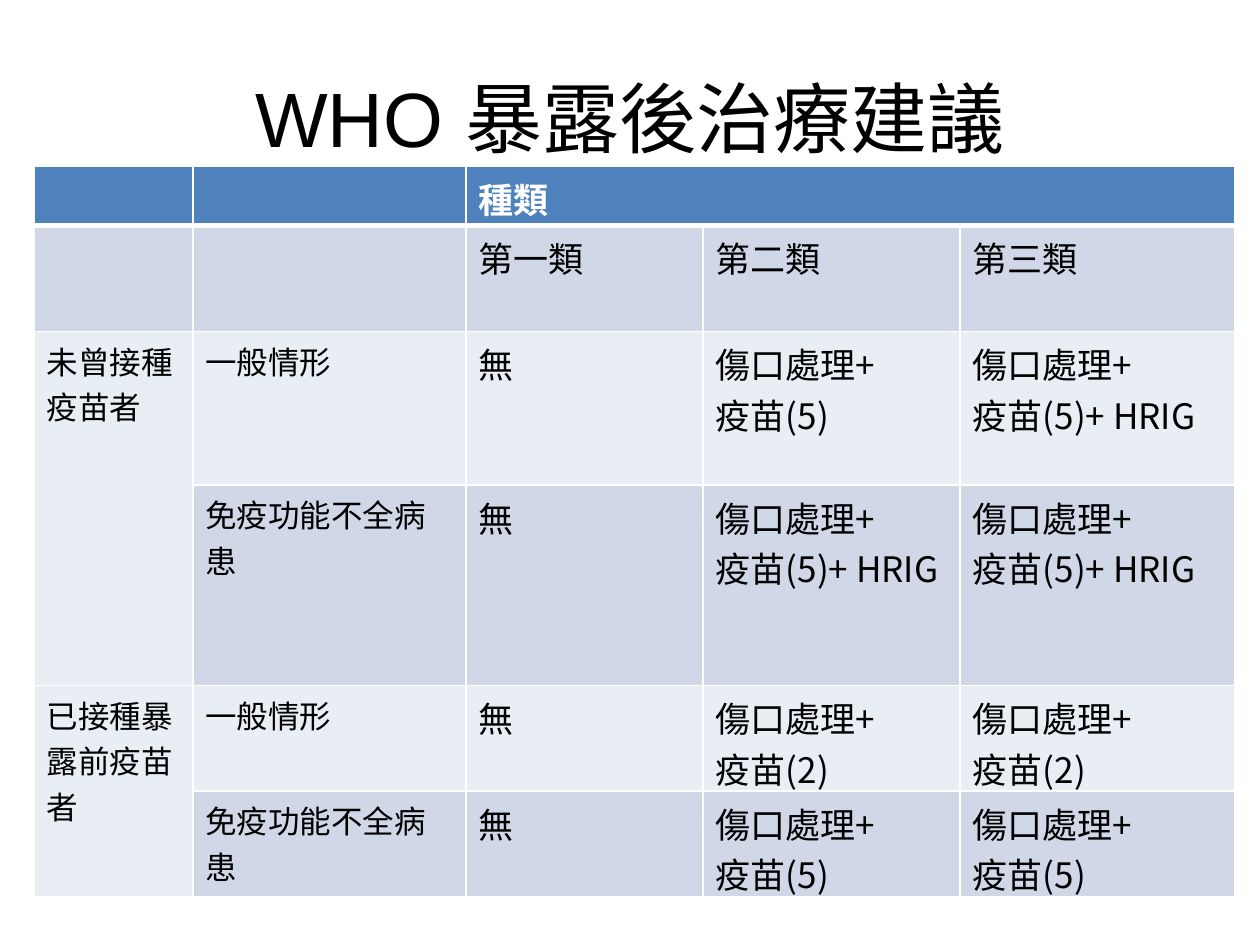
from lxml import etree
from pptx import Presentation
from pptx.dml.color import RGBColor
from pptx.enum.text import MSO_ANCHOR as Anchor, PP_ALIGN as Align
from pptx.oxml.ns import qn
from pptx.util import Inches, Pt

CJK = "Noto Sans CJK SC"


def color(value):
    return RGBColor.from_string(value)


def write(frame, text, size=20, font=CJK, ink="000000", bold=False, align=Align.LEFT):
    frame.word_wrap = True
    for i, line in enumerate(text.split("\n")):
        para = frame.paragraphs[0] if i == 0 else frame.add_paragraph()
        para.alignment = align
        run = para.add_run()
        run.text = line
        run.font.size, run.font.bold, run.font.name = Pt(size), bold, font
        run.font.color.rgb = color(ink)
        etree.SubElement(run.font._element, qn("a:ea"), typeface=CJK)


prs = Presentation()
prs.slide_width, prs.slide_height = Inches(10), Inches(7.5)
slide = prs.slides.add_slide(prs.slide_layouts[6])

# Title
title = slide.shapes.add_textbox(Inches(0.5), Inches(0.3), Inches(9), Inches(1.25)).text_frame
title.vertical_anchor = Anchor.MIDDLE
write(title, "WHO 暴露後治療建議", size=44, font="Arial", align=Align.CENTER)

# Treatment table: two label columns, then three exposure categories
wound = "傷口處理+\n疫苗"
two, five, five_hrig = wound + "(2)", wound + "(5)", wound + "(5)+ HRIG"
general, immune = "一般情形", "免疫功能不全病患"
rows = [
    ["", "", "種類", "", ""],
    ["", "", "第一類", "第二類", "第三類"],
    ["未曾接種疫苗者", general, "無", five, five_hrig],
    ["", immune, "無", five_hrig, five_hrig],
    ["已接種暴露前疫苗者", general, "無", two, two],
    ["", immune, "無", five, five],
]
widths = [1.26, 2.17, 1.88, 2.04, 2.18]
heights = [0.47, 0.84, 1.22, 1.59, 0.84, 0.84]
table = slide.shapes.add_table(len(rows), len(widths), Inches(0.27), Inches(1.32),
                               Inches(sum(widths)), Inches(sum(heights))).table
for column, width in zip(table.columns, widths):
    column.width = Inches(width)
for row, height in zip(table.rows, heights):
    row.height = Inches(height)

# Merged cells: category heading and the two vaccination groups
table.cell(0, 2).merge(table.cell(0, 4))
for r in (2, 4):
    table.cell(r, 0).merge(table.cell(r + 1, 0))

for r, texts in enumerate(rows):
    header = r == 0
    for c, text in enumerate(texts):
        cell = table.cell(r, c)
        # White borders, heavier between header and body
        for side in ("L", "R", "T", "B"):
            heavy = (header and side == "B") or (r == 1 and side == "T")
            border = etree.SubElement(cell._tc.get_or_add_tcPr(), qn("a:ln" + side),
                                      w=str(Pt(3 if heavy else 1)))
            fill = etree.SubElement(border, qn("a:solidFill"))
            etree.SubElement(fill, qn("a:srgbClr"), val="FFFFFF")
        # Header blue, then alternating bands
        cell.fill.solid()
        band = "D0D8E8" if r % 2 else "E9EDF4"
        cell.fill.fore_color.rgb = color("4F81BD" if header else band)
        if text:
            write(cell.text_frame, text, size=18 if c < 2 else 20,
                  ink="FFFFFF" if header else "000000", bold=header)

prs.save("out.pptx")
